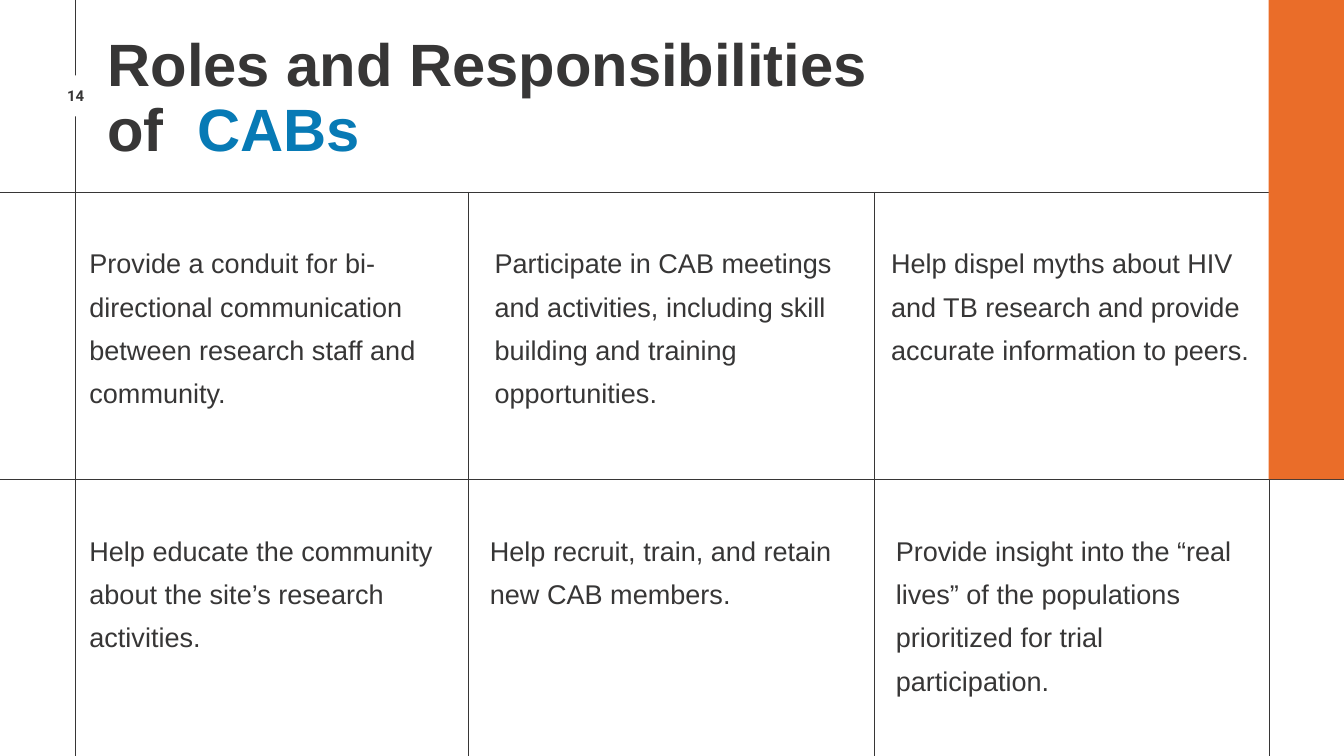
from pptx import Presentation
from pptx.dml.color import RGBColor
from pptx.enum.shapes import MSO_CONNECTOR, MSO_SHAPE
from pptx.enum.text import MSO_AUTO_SIZE, PP_ALIGN
from pptx.oxml.ns import qn
from pptx.util import Inches, Pt
from lxml.etree import SubElement

COLORS = {"ink": "373636", "blue": "077AB5", "orange": "EA6D29", "white": "FFFFFF"}
STYLES = {
    "title": {"size": Pt(64), "name": "Arial", "bold": True},
    "body": {"size": Pt(29), "name": "Arial", "bold": False},
    "number": {"size": Pt(16), "name": "Roboto", "bold": True},
}
LEADING = {"title": 70.4, "body": 46.4, "number": 17.6}


class SlideBuilder:
    """Places elements by percent of the slide's width and height."""

    def __init__(self, prs):
        self.width, self.height = prs.slide_width, prs.slide_height
        self.s = prs.slides.add_slide(prs.slide_layouts[6])

    def x(self, share):
        return round(self.width * share / 100)

    def y(self, share):
        return round(self.height * share / 100)

    def box(self, left, top, width, height):
        return self.x(left), self.y(top), self.x(width), self.y(height)

    def rule(self, x1, y1, x2, y2):
        line = self.s.shapes.add_connector(
            MSO_CONNECTOR.STRAIGHT, self.x(x1), self.y(y1), self.x(x2), self.y(y2))
        line.line.width = Pt(0.75)
        line.line.color.rgb = RGBColor.from_string(COLORS["ink"])
        SubElement(line._element.spPr, qn("a:effectLst"))

    def panel(self, area, color):
        sp = self.s.shapes.add_shape(MSO_SHAPE.RECTANGLE, *self.box(*area))
        sp.shadow.inherit = False
        sp.fill.solid()
        sp.fill.fore_color.rgb = RGBColor.from_string(COLORS[color])
        sp.line.fill.background()

    def text(self, area, runs, style, align=PP_ALIGN.LEFT):
        tf = self.s.shapes.add_textbox(*self.box(*area)).text_frame
        frame = {"word_wrap": True, "auto_size": MSO_AUTO_SIZE.SHAPE_TO_FIT_TEXT,
                 "margin_left": 0, "margin_top": 0, "margin_right": 0, "margin_bottom": 0}
        for key, value in frame.items():
            setattr(tf, key, value)
        p = tf.paragraphs[0]
        p.alignment = align
        p.line_spacing = Pt(LEADING[style])
        for words, color in runs:
            r = p.add_run()
            r.text = words
            for key, value in STYLES[style].items():
                setattr(r.font, key, value)
            r.font.color.rgb = RGBColor.from_string(COLORS[color])


def main():
    prs = Presentation()
    prs.slide_width, prs.slide_height = Inches(20), Inches(11.25)
    slide = SlideBuilder(prs)

    # Grid rules: title row, then two rows of three columns
    row_tops = (25.38, 63.42)
    for x, top in ((5.58, 0), (34.83, row_tops[0]), (65.03, row_tops[0]), (94.43, 0)):
        slide.rule(x, top, x, 100)
    for y in row_tops:
        slide.rule(0, y, 100, y)

    # Accent panel and page number
    slide.panel((94.4, 0, 5.6, 63.38), "orange")
    slide.panel((3.45, 9.96, 4.3, 5.42), "white")
    slide.text((3.8, 11.64, 3.65, 2.22), [("14", "ink")], "number", PP_ALIGN.CENTER)

    # Title
    slide.text((8, 4.27, 57.05, 17.42),
               [("Roles and Responsibilities of  ", "ink"), ("CABs", "blue")], "title")

    # Roles: left edge and wording of each cell, row by row
    roles = (
        ((6.65, "Provide a conduit for bi-directional communication between "
                "research staff and community."),
         (36.8, "Participate in CAB meetings and activities, including skill "
                "building and training opportunities."),
         (66.3, "Help dispel myths about HIV and TB research and provide "
                "accurate information to peers.")),
        ((6.65, "Help educate the community about the site’s research activities."),
         (36.45, "Help recruit, train, and retain new CAB members."),
         (66.65, "Provide insight into the “real lives” of the populations "
                 "prioritized for trial participation.")),
    )
    for row_top, cells in zip(row_tops, roles):
        for left, words in cells:
            slide.text((left, row_top + 5.82, 26.95, 22.4), [(words, "ink")], "body")

    prs.save("out.pptx")


if __name__ == "__main__":
    main()
